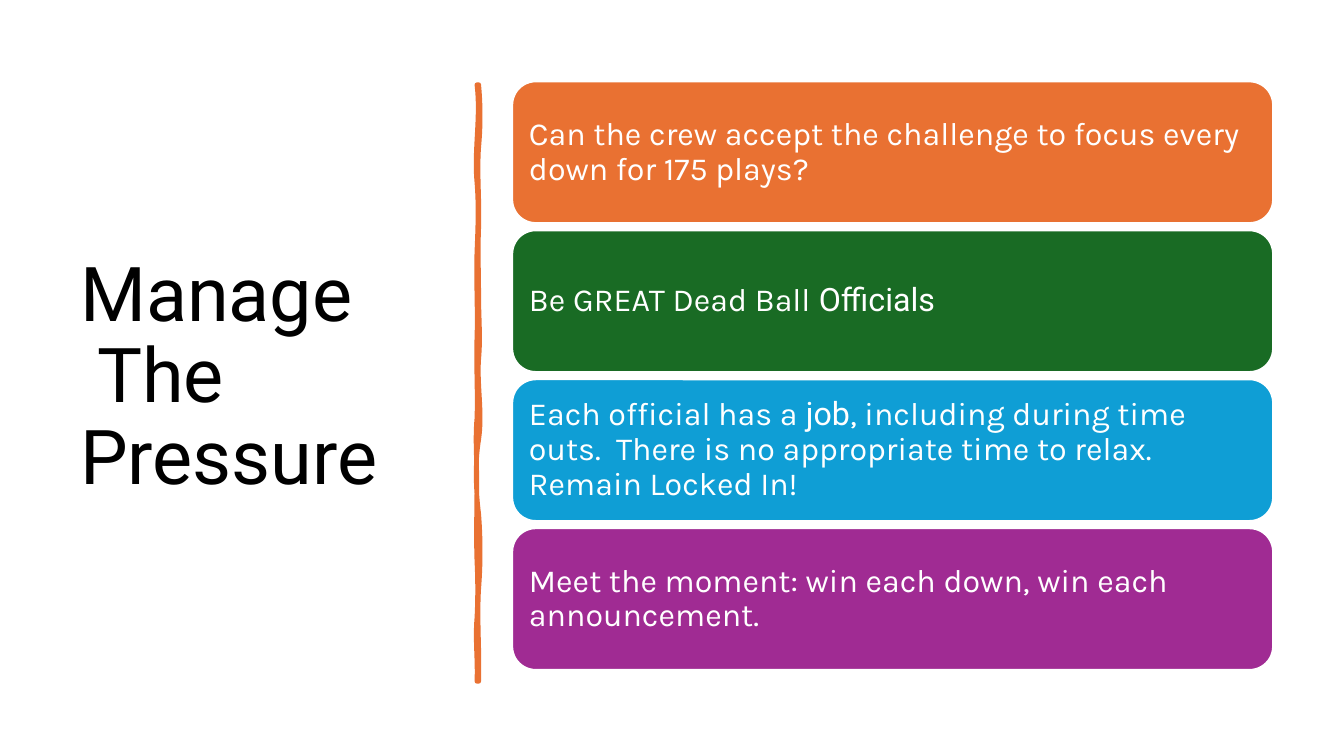
"""Build the "Manage The Pressure" slide with a hand-drawn rule and four cards."""
from dataclasses import dataclass

from lxml import etree
from pptx import Presentation
from pptx.dml.color import RGBColor
from pptx.enum import shapes, text
from pptx.oxml import ns
from pptx.util import Pt

COLORS = {
    "black": "000000",
    "white": "FFFFFF",
    "orange": "E97132",
    "green": "196B24",
    "blue": "0F9ED5",
    "purple": "A02B93",
}
CARD_LEFT, CARD_TOP, CARD_WIDTH, CARD_HEIGHT, CARD_STEP = 365.8, 58.1, 543.6, 101.3, 106.4
RULE_LEFT, RULE_RIGHT, RULE_TOP, RULE_BOTTOM = 340.6, 342, 60.5, 486.7


@dataclass(frozen=True)
class Card:
    color: str
    runs: tuple[tuple[str, str], ...]


@dataclass(frozen=True)
class Bend:
    first: float
    second: float
    end_y: float


@dataclass(frozen=True)
class Stroke:
    right: tuple[Bend, ...]
    left: tuple[Bend, ...]
    hidden: str


CARDS = (
    Card("orange", (("Can the crew accept the challenge to focus every  down for 175 plays?", "Karla"),)),
    Card("green", (("Be GREAT Dead Ball ", "Karla"), ("Officials", "Roboto"))),
    Card("blue", (
        ("Each official has a ", "Karla"),
        ("job", "Roboto"),
        (", including during time outs.  There is no appropriate time to relax.  Remain Locked In!", "Karla"),
    )),
    Card("purple", (("Meet the moment: win each down, win each announcement.", "Karla"),)),
)
STROKES = (
    Stroke(
        right=(
            Bend(1.4, 1.4, 105.1), Bend(-1.4, 0.7, 162.7), Bend(-0.7, 0, 211.7), Bend(0, 1.4, 256.3),
            Bend(-1.4, 2.9, 313.9), Bend(-2.9, -2.2, 367.2), Bend(1.4, 1.4, 420.5), Bend(-1.4, 0.7, RULE_BOTTOM),
        ),
        left=(
            Bend(0.7, -1.4, 441.4), Bend(0.7, 0.7, 401), Bend(-0.7, 0, 343.4), Bend(0, -1.4, 298.8),
            Bend(0.7, -0.7, 241.2), Bend(0.7, -0.7, 180), Bend(0.7, 1.4, 130.3), Bend(-2.2, 2.9, RULE_TOP),
        ),
        hidden="fill",
    ),
    Stroke(
        right=(
            Bend(0, -2.2, 109.4), Bend(1.4, -0.7, 149.8), Bend(0.7, -0.7, 211.7), Bend(0.7, -1.4, 260.6),
            Bend(1.4, 1.4, 309.6), Bend(-2.2, 0, 371.5), Bend(0, -0.7, 416.2), Bend(0.7, -0.7, RULE_BOTTOM),
        ),
        left=(
            Bend(-2.2, 0.7, 441.4), Bend(-0.7, 1.4, 388.1), Bend(-1.4, 2.2, 339.1), Bend(-2.2, 2.9, 277.9),
            Bend(-2.9, 0.7, 216), Bend(-1.4, -1.4, 171.4), Bend(0.7, 0.7, 118.1), Bend(-1.4, 1.4, RULE_TOP),
        ),
        hidden="stroke",
    ),
)


def rgb(name: str) -> RGBColor:
    return RGBColor.from_string(COLORS[name])


def add_run(p, content: str, *, font: str, size: float, color: str) -> None:
    r = p.add_run()
    r.text = content
    r.font.name = font
    r.font.size = Pt(size)
    r.font.color.rgb = rgb(color)


def format_frame(tf, inset_y: float):
    tf.word_wrap = True
    tf.auto_size = text.MSO_AUTO_SIZE.NONE
    tf.vertical_anchor = text.MSO_ANCHOR.MIDDLE
    tf.margin_left = tf.margin_right = Pt(7.2)
    tf.margin_top = tf.margin_bottom = Pt(inset_y)
    p = tf.paragraphs[0]
    p.alignment = text.PP_ALIGN.LEFT
    p.line_spacing = 0.9
    return p


def add_title(s) -> None:
    sp = s.shapes.title
    sp.left, sp.top, sp.width, sp.height = Pt(50), Pt(50.2), Pt(269.3), Pt(439.9)
    p = format_frame(sp.text_frame, 3.6)
    add_run(p, "Manage", font="Roboto", size=54, color="black")
    p.add_line_break()
    add_run(p, " The Pressure", font="Roboto", size=54, color="black")


def add_segment(path, kind: str, *points: tuple[float, float]) -> None:
    segment = etree.SubElement(path, ns.qn(f"a:{kind}"))
    for x, y in points:
        etree.SubElement(segment, ns.qn("a:pt"), x=str(Pt(x - RULE_LEFT)), y=str(Pt(y - RULE_TOP)))


def add_edge(path, x: float, y: float, bends: tuple[Bend, ...]) -> None:
    for bend in bends:
        third = (bend.end_y - y) / 3
        add_segment(
            path, "cubicBezTo", (x + bend.first, y + third), (x + bend.second, y + 2 * third), (x, bend.end_y)
        )
        y = bend.end_y


def add_stroke(path_list, stroke: Stroke, size: dict[str, str]) -> None:
    hidden = {"fill": "none"} if stroke.hidden == "fill" else {"stroke": "0"}
    path = etree.SubElement(path_list, ns.qn("a:path"), **size, **hidden)
    add_segment(path, "moveTo", (RULE_RIGHT, RULE_TOP))
    add_edge(path, RULE_RIGHT, RULE_TOP, stroke.right)
    add_segment(path, "lnTo", (RULE_LEFT, RULE_BOTTOM))
    add_edge(path, RULE_LEFT, RULE_BOTTOM, stroke.left)
    etree.SubElement(path, ns.qn("a:close"))


def add_rule(s) -> None:
    left, right, top, bottom = Pt(RULE_LEFT), Pt(RULE_RIGHT), Pt(RULE_TOP), Pt(RULE_BOTTOM)
    builder = s.shapes.build_freeform(left, top)
    builder.add_line_segments([(right, top), (right, bottom), (left, bottom)])
    sp = builder.convert_to_shape()
    sp.shadow.inherit = False
    sp.fill.solid()
    sp.fill.fore_color.rgb = rgb("orange")
    sp.line.color.rgb = rgb("orange")
    sp.line.width = Pt(3.25)
    path_list = next(sp._element.iter(ns.qn("a:pathLst")))
    for path in list(path_list):
        path_list.remove(path)
    for stroke in STROKES:
        add_stroke(path_list, stroke, {"w": str(sp.width), "h": str(sp.height)})


def add_card(s, card: Card, top: float) -> None:
    sp = s.shapes.add_shape(
        shapes.MSO_SHAPE.ROUNDED_RECTANGLE, Pt(CARD_LEFT), Pt(top), Pt(CARD_WIDTH), Pt(CARD_HEIGHT)
    )
    sp.shadow.inherit = False
    sp.fill.solid()
    sp.fill.fore_color.rgb = rgb(card.color)
    sp.line.color.rgb = rgb("white")
    sp.line.width = Pt(1.5)
    p = format_frame(sp.text_frame, 7.2)
    for content, font in card.runs:
        add_run(p, content, font=font, size=23, color="white")


def main() -> None:
    prs = Presentation()
    prs.slide_width, prs.slide_height = Pt(960), Pt(540)
    s = prs.slides.add_slide(prs.slide_layouts.get_by_name("Title Only"))
    add_title(s)
    add_rule(s)
    for i, card in enumerate(CARDS):
        add_card(s, card, CARD_TOP + i * CARD_STEP)
    prs.save("out.pptx")


if __name__ == "__main__":
    main()
